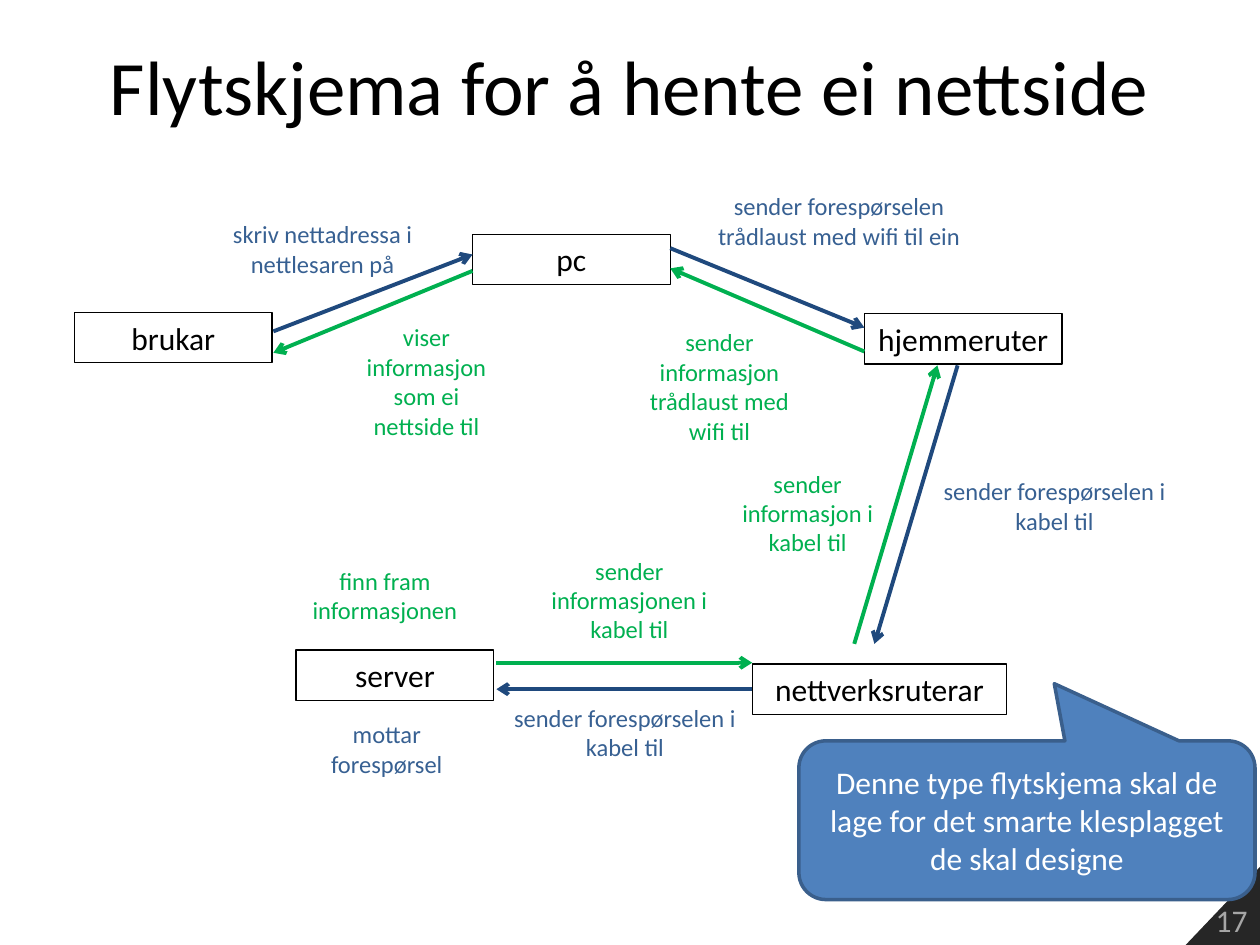
"""Build a flow chart slide showing how a web page is fetched."""
from dataclasses import dataclass

from lxml import etree
from pptx import Presentation
from pptx.dml.color import RGBColor
from pptx.enum.shapes import MSO_CONNECTOR, MSO_SHAPE
from pptx.enum.text import MSO_ANCHOR, PP_ALIGN
from pptx.oxml.ns import qn
from pptx.util import Inches, Pt

RECTANGLE = MSO_SHAPE.RECTANGLE
CALLOUT = MSO_SHAPE.ROUNDED_RECTANGULAR_CALLOUT
STRAIGHT = MSO_CONNECTOR.STRAIGHT
TOP, MIDDLE, BOTTOM = MSO_ANCHOR.TOP, MSO_ANCHOR.MIDDLE, MSO_ANCHOR.BOTTOM
CENTER, RIGHT = PP_ALIGN.CENTER, PP_ALIGN.RIGHT
LEFT_SIDE = 1
WIDTH, HEIGHT = Inches(10), Inches(7.5)
COLUMNS, ROWS = 100, 75
BOX_ROWS = 4


@dataclass(frozen=True)
class Theme:
    """Colours, font, type sizes and line widths of the slide."""
    font: str = "Calibri"
    black: str = "000000"
    white: str = "FFFFFF"
    request: str = "376092"
    request_arrow: str = "1F497D"
    response: str = "00B050"
    callout: str = "4F81BD"
    callout_line: str = "3A5F8C"
    corner: str = "262626"
    number: str = "A6A6A6"
    title_size: int = 44
    body_size: int = 18
    label_size: int = 14
    box_line: float = 0.75
    callout_width: float = 2
    arrow_width: float = 2.25


THEME = Theme()

NODES = {
    "pc": (37.5, 18.6, 15.7),
    "hjemmeruter": (68.6, 24.9, 15.7),
    "server": (23.5, 51.6, 15.7),
    "nettverksruterar": (59.7, 52.7, 20.2),
    "brukar": (5.9, 24.8, 15.7),
}

REQUEST_ARROWS = [
    (21.7, 26.3, 37.5, 20.2),
    (53.2, 19.7, 68.6, 26),
    (76, 29, 69.4, 51.1),
]
RESPONSE_ARROWS = [
    (39.4, 52.6, 59.7, 52.6),
    (67.8, 51.1, 74.4, 29),
    (68.6, 27.9, 53.2, 21.3),
    (37.5, 21.5, 21.7, 28),
]

REQUEST_LABELS = [
    (16.4, 16.9, 18.4, 5.7, ["skriv nettadressa i nettlesaren på"]),
    (54.1, 14.7, 25, 5.7, ["sender forespørselen trådlaust med wifi til ein"]),
    (72, 37.3, 23.4, 5.7, ["sender forespørselen i kabel til"]),
    (37.9, 55.3, 23.4, 5.7, ["sender forespørselen i kabel til"]),
    (24, 56.6, 13.4, 5.7, ["mottar forespørsel"]),
]
RESPONSE_LABELS = [
    (21.7, 44.4, 17.7, 5.7, ["finn fram informasjonen"]),
    (42.4, 43.6, 15.1, 8.1, ["sender informasjonen i kabel til"]),
    (56.2, 36.7, 15.8, 8.1, ["sender informasjon i", "kabel til"]),
    (49.2, 25.5, 15.8, 10.4, ["sender informasjon trådlaust med wifi til"]),
    (27.1, 25.1, 13.5, 10.4, ["viser informasjon som ei nettside til"]),
]


def across(columns):
    """Return the length of a number of grid columns."""
    return round(WIDTH * columns / COLUMNS)


def down(rows):
    """Return the length of a number of grid rows."""
    return round(HEIGHT * rows / ROWS)


def place(left, top, width, height):
    """Return a grid area as slide lengths."""
    return across(left), down(top), across(width), down(height)


def write(shape, lines, size, color, anchor=TOP, alignment=CENTER):
    """Write one paragraph per line into a shape."""
    frame = shape.text_frame
    frame.word_wrap = True
    frame.vertical_anchor = anchor
    for index, line in enumerate(lines):
        paragraph = frame.add_paragraph() if index else frame.paragraphs[0]
        paragraph.alignment = alignment
        run = paragraph.add_run()
        run.text = line
        run.font.name = THEME.font
        run.font.size = Pt(size)
        run.font.color.rgb = RGBColor.from_string(color)


def paint(shape, fill=None, line=None, line_width=0):
    """Set the fill and outline of a shape and drop its shadow."""
    shape.shadow.inherit = False
    if fill:
        shape.fill.solid()
        shape.fill.fore_color.rgb = RGBColor.from_string(fill)
    else:
        shape.fill.background()
    if line:
        shape.line.color.rgb = RGBColor.from_string(line)
        shape.line.width = Pt(line_width)
    else:
        shape.line.fill.background()


def add_text(slide, area, lines, size, color, anchor=TOP):
    """Add a centred text box."""
    write(slide.shapes.add_textbox(*place(*area)), lines, size, color, anchor)


def add_node(slide, name, left, top, width):
    """Add an outlined box naming one step of the flow."""
    shape = slide.shapes.add_shape(RECTANGLE, *place(left, top, width, BOX_ROWS))
    paint(shape, line=THEME.black, line_width=THEME.box_line)
    write(shape, [name], THEME.body_size, THEME.black)
    return shape


def add_arrow(slide, ends, color):
    """Add a straight arrow between two grid points."""
    left, top, right, bottom = ends
    arrow = slide.shapes.add_connector(
        STRAIGHT, across(left), down(top), across(right), down(bottom))
    arrow.line.color.rgb = RGBColor.from_string(color)
    arrow.line.width = Pt(THEME.arrow_width)
    properties = arrow.line._get_or_add_ln()
    etree.SubElement(properties, qn("a:tailEnd"), type="arrow")
    etree.SubElement(properties.getparent(), qn("a:effectLst"))
    return arrow


def add_page_corner(slide, number):
    """Add the dark corner with the slide number."""
    builder = slide.shapes.build_freeform(across(94.1), HEIGHT)
    builder.add_line_segments([(WIDTH, down(68.8)), (WIDTH, HEIGHT)])
    shape = builder.convert_to_shape()
    paint(shape, fill=THEME.corner)
    write(shape, [number], THEME.body_size, THEME.number, BOTTOM, RIGHT)


def add_callout(slide, area, adjustments, text):
    """Add a speech bubble with its pointer set by the adjustments."""
    shape = slide.shapes.add_shape(CALLOUT, *place(*area))
    for index, value in enumerate(adjustments):
        shape.adjustments[index] = value
    paint(shape, THEME.callout, THEME.callout_line, THEME.callout_width)
    write(shape, [text], THEME.body_size, THEME.white, MIDDLE)


def main():
    """Build and save the slide."""
    presentation = Presentation()
    presentation.slide_width, presentation.slide_height = WIDTH, HEIGHT
    slide = presentation.slides.add_slide(presentation.slide_layouts[6])
    add_page_corner(slide, "17")
    add_text(slide, (5, 0.5, 90, 12.5), ["Flytskjema for å hente ei nettside"],
             THEME.title_size, THEME.black, MIDDLE)
    nodes = {name: add_node(slide, name, *area) for name, area in NODES.items()}
    for arrows, color in ((REQUEST_ARROWS, THEME.request_arrow),
                          (RESPONSE_ARROWS, THEME.response)):
        for ends in arrows:
            add_arrow(slide, ends, color)
    to_server = add_arrow(slide, (59.7, 54.7, 39.4, 54.7), THEME.request_arrow)
    to_server.begin_connect(nodes["nettverksruterar"], LEFT_SIDE)
    for labels, color in ((REQUEST_LABELS, THEME.request),
                          (RESPONSE_LABELS, THEME.response)):
        for *area, lines in labels:
            add_text(slide, area, lines, THEME.label_size, color)
    add_callout(slide, (63.4, 58.8, 36.2, 12.6), (0.06, -0.86, 0.17),
                "Denne type flytskjema skal de lage for det smarte "
                "klesplagget de skal designe")
    presentation.save("out.pptx")


if __name__ == "__main__":
    main()
